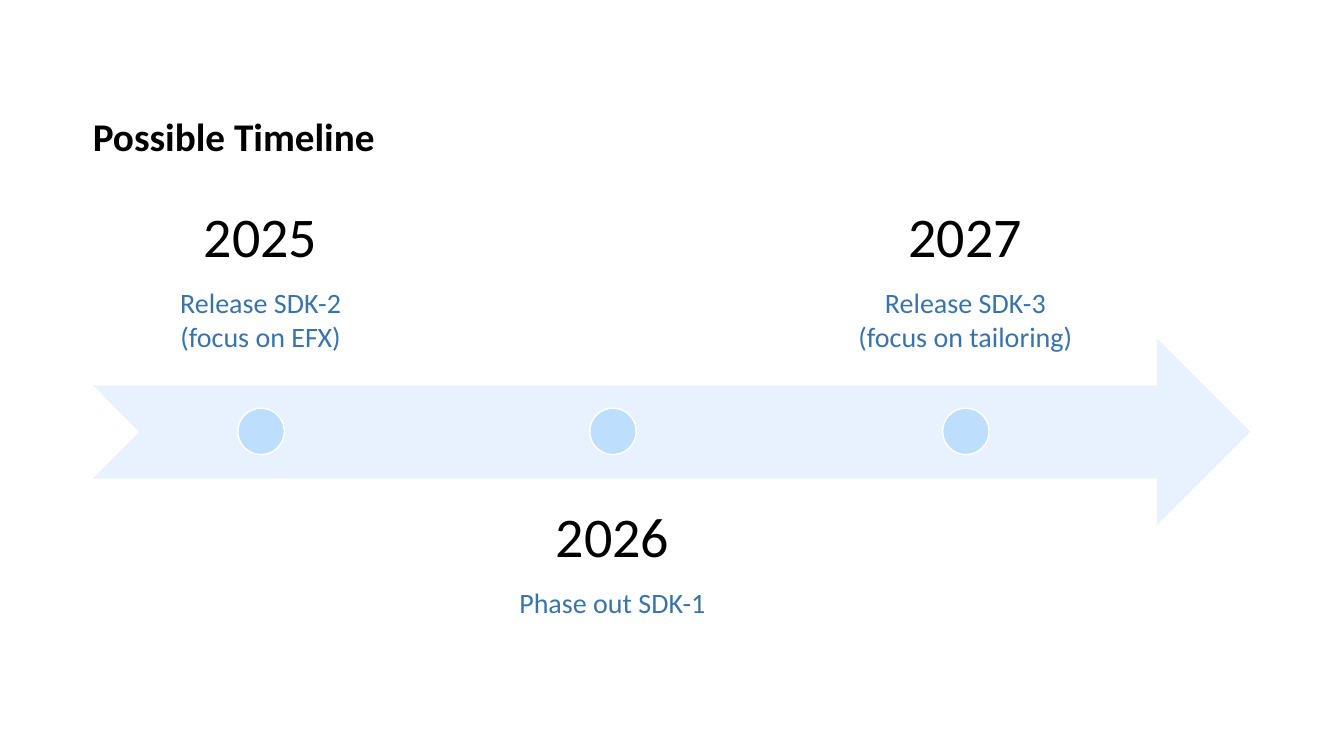
from pptx import Presentation
from pptx.dml.color import RGBColor
from pptx.enum.shapes import MSO_SHAPE as Shape
from pptx.enum.text import MSO_ANCHOR as Anchor, PP_ALIGN as Align
from pptx.util import Pt

PX = 9144  # EMU per px, 100 px to the inch

THEME = {
    "font": "Calibri",
    "arrow": RGBColor.from_string("E8F2FE"),
    "dot": RGBColor.from_string("BDDEFD"),
    "dot_line": RGBColor.from_string("FFFFFF"),
    "black": RGBColor.from_string("000000"),
    "blue": RGBColor.from_string("3973AC"),
}
STYLES = {
    "title": {"size": Pt(28), "bold": True, "color": THEME["black"],
              "align": Align.LEFT, "after": Pt(0)},
    "year": {"size": Pt(40), "bold": False, "color": THEME["black"],
             "align": Align.CENTER, "after": Pt(14)},
    "detail": {"size": Pt(20), "bold": False, "color": THEME["blue"],
               "align": Align.CENTER, "after": Pt(3)},
}


def add_text(slide, box, lines, anchor, margins):
    """Add a text box; lines holds pairs of text and style name."""
    frame = slide.shapes.add_textbox(*(value * PX for value in box)).text_frame
    frame.word_wrap = True
    frame.vertical_anchor = anchor
    for side, margin in zip(("left", "top", "right", "bottom"), margins):
        setattr(frame, f"margin_{side}", margin * PX)
    for index, (text, style_name) in enumerate(lines):
        style = STYLES[style_name]
        paragraph = frame.add_paragraph() if index else frame.paragraphs[0]
        paragraph.text = text
        layout = {"alignment": style["align"], "line_spacing": 0.9,
                  "space_before": Pt(0), "space_after": style["after"]}
        for name, value in layout.items():
            setattr(paragraph, name, value)
        font = paragraph.runs[0].font
        for name in ("size", "bold"):
            setattr(font, name, style[name])
        font.name = THEME["font"]
        font.color.rgb = style["color"]


def add_filled(slide, kind, box, color):
    """Add a flat preset shape without an outline."""
    shape = slide.shapes.add_shape(kind, *(value * PX for value in box))
    shape.shadow.inherit = False
    shape.fill.solid()
    shape.fill.fore_color.rgb = color
    shape.line.fill.background()
    return shape


presentation = Presentation()
presentation.slide_width = 1333 * PX
presentation.slide_height = 750 * PX
slide = presentation.slides.add_slide(presentation.slide_layouts[6])

# Title
add_text(slide, (92, 14, 1148, 145), [("Possible Timeline", "title")],
         Anchor.BOTTOM, (0, 5, 0, 0))

# Timeline arrow
add_filled(slide, Shape.NOTCHED_RIGHT_ARROW, (92, 336, 1148, 185), THEME["arrow"])

# Milestones, alternately above and below the arrow
MILESTONES = [
    ("2025", ["Release SDK-2", "(focus on EFX)"]),
    ("2026", ["Phase out SDK-1"]),
    ("2027", ["Release SDK-3", "(focus on tailoring)"]),
]
LABEL_WIDTH, LABEL_HEIGHT, DOT_SIZE = 333, 185, 46
for index, (year, details) in enumerate(MILESTONES):
    left = 92 + index * 699 // 2
    top, anchor = (474, Anchor.TOP) if index % 2 else (197, Anchor.BOTTOM)
    lines = [(year, "year")] + [(detail, "detail") for detail in details]
    add_text(slide, (left, top, LABEL_WIDTH, LABEL_HEIGHT), lines, anchor, (31,) * 4)

    dot_left = left + (LABEL_WIDTH - DOT_SIZE + 1) // 2
    dot = add_filled(slide, Shape.OVAL, (dot_left, 405, DOT_SIZE, DOT_SIZE), THEME["dot"])
    dot.line.color.rgb = THEME["dot_line"]
    dot.line.width = Pt(1)

presentation.save("out.pptx")
